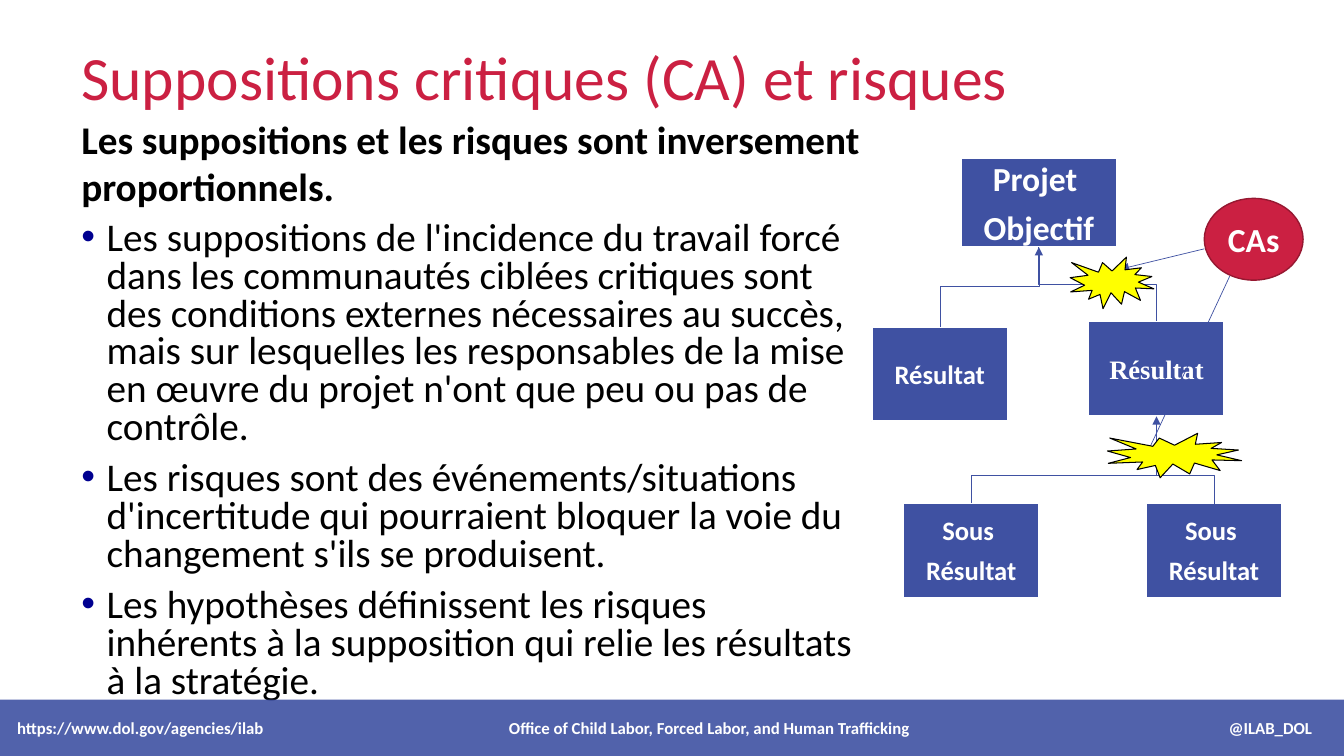
import pptx
import pptx.util
import pptx.dml.color
import pptx.enum.shapes
import pptx.enum.text
import pptx.oxml
import pptx.oxml.ns
from pptx.util import Cm

Preset = pptx.enum.shapes.MSO_SHAPE
Link = pptx.enum.shapes.MSO_CONNECTOR
Align = pptx.enum.text.PP_ALIGN
Anchor = pptx.enum.text.MSO_ANCHOR

# Content: positions and sizes are in centimetres
BLUE, RED, WHITE, BLACK = "3F51A2", "CB2042", "FFFFFF", "000000"
TITLE = "Suppositions critiques (CA) et risques"
INTRO = "Les suppositions et les risques sont inversement proportionnels."
POINTS = [
    "Les suppositions de l'incidence du travail forcé dans les communautés ciblées "
    "critiques sont des conditions externes nécessaires au succès, mais sur lesquelles "
    "les responsables de la mise en œuvre du projet n'ont que peu ou pas de contrôle.",
    "Les risques sont des événements/situations d'incertitude qui pourraient bloquer "
    "la voie du changement s'ils se produisent.",
    "Les hypothèses définissent les risques inhérents à la supposition qui relie les "
    "résultats à la stratégie.",
]
FOOTER = ["https://www.dol.gov/agencies/ilab",
          "Office of Child Labor, Forced Labor, and Human Trafficking",
          "@ILAB_DOL"]
FOOTER_TABS = [("ctr", 17.45), ("r", 32.64)]

RESULT_SIZE = (3.43, 2.39)
GOAL = (24.21, 3.99, 3.94, 2.24)
LEFT_RESULT = (21.97, 8.23, *RESULT_SIZE)
RIGHT_RESULT = (27.43, 8.1, *RESULT_SIZE)
LEFT_SUB = (22.76, 12.67, *RESULT_SIZE)
RIGHT_SUB = (28.88, 12.67, *RESULT_SIZE)
BOXES = [
    (GOAL, ["Projet ", "Objectif"], 24, "Calibri"),
    (LEFT_RESULT, ["Résultat"], 19, "Calibri"),
    (RIGHT_RESULT, ["Résultat"], 19, "Times New Roman"),
    (RIGHT_SUB, ["Sous ", "Résultat"], 19, "Calibri"),
    (LEFT_SUB, ["Sous ", "Résultat"], 19, "Calibri"),
]
SUB_BAR = 11.99
ASSUMPTIONS = (30.35, 5, 2.49, 2.06)
ASSUMPTION_ARROWS = [((30.35, 6.27), (28.24, 6.78)), ((30.99, 6.96), (28.88, 11.48))]
BURSTS = [(26.97, 6.48, 2.11, 1.3), (27.91, 10.92, 3.38, 1.12)]


# Helpers
def color(hex_code):
    return pptx.dml.color.RGBColor.from_string(hex_code)


def add_xml(parent, tag, **attributes):
    child = pptx.oxml.parse_xml(f"<a:{tag} {pptx.oxml.ns.nsdecls('a')}/>")
    for key, value in attributes.items():
        child.set(key, str(value))
    parent.append(child)
    return child


def write(shape, lines, size, ink, bold=False, font="Calibri", align=Align.LEFT,
          before=0, anchor=Anchor.TOP, wrap=True):
    frame = shape.text_frame
    frame.text = "\n".join(lines)
    frame.word_wrap = wrap
    frame.vertical_anchor = anchor
    for paragraph in frame.paragraphs:
        paragraph.alignment = align
        paragraph.space_before = pptx.util.Pt(before)
        for run in paragraph.runs:
            run.font.size = pptx.util.Pt(size)
            run.font.name = font
            run.font.bold = bold
            run.font.color.rgb = color(ink)
    return frame


def text_box(place, lines, size, ink, **style):
    return write(slide.shapes.add_textbox(*map(Cm, place)), lines, size, ink, **style)


def block(preset, place, fill, line=None, weight=0):
    shape = slide.shapes.add_shape(preset, *map(Cm, place))
    shape.shadow.inherit = False
    shape.fill.solid()
    shape.fill.fore_color.rgb = color(fill)
    if line:
        shape.line.color.rgb = color(line)
        shape.line.width = pptx.util.Pt(weight)
    else:
        shape.line.fill.background()
    return shape


def connect(start, end, arrow=False, kind=Link.STRAIGHT):
    link = slide.shapes.add_connector(kind, *map(Cm, (*start, *end)))
    link.line.color.rgb = color(BLUE)
    link.line.width = pptx.util.Pt(0.5)
    if arrow:
        add_xml(link.line._get_or_add_ln(), "tailEnd", type="triangle")
    add_xml(link._element.spPr, "effectLst")
    return link


def elbow(start, end, bend, arrow=False):
    """Leave start vertically, cross to the right at height bend, then reach end."""
    (x0, y0), (x1, y1) = start, end
    link = connect(start, end, arrow, Link.ELBOW)
    across, along = x1 - x0, abs(y1 - y0)
    link.left, link.top = Cm((x0 + x1 - along) / 2), Cm((y0 + y1 - across) / 2)
    link.width, link.height = Cm(along), Cm(across)
    # A quarter turn makes the connector leave vertically
    frame = link._element.spPr.find(pptx.oxml.ns.qn("a:xfrm"))
    frame.set("rot", "5400000")
    frame.set("flipV", "1")
    frame.set("flipH", "1" if y1 < y0 else "0")
    guides = link._element.spPr.find(".//" + pptx.oxml.ns.qn("a:avLst"))
    if guides is None:
        guides = add_xml(link._element.spPr.find(pptx.oxml.ns.qn("a:prstGeom")), "avLst")
    ratio = round((bend - y0) / (y1 - y0) * 100000)
    add_xml(guides, "gd", name="adj1", fmla=f"val {ratio}")


def top_of(box):
    return box[0] + box[2] / 2, box[1]


def bottom_of(box):
    return box[0] + box[2] / 2, box[1] + box[3]


# Slide
deck = pptx.Presentation()
deck.slide_width, deck.slide_height = Cm(33.87), Cm(19.05)
slide = deck.slides.add_slide(deck.slide_layouts[6])

# Title and text column
text_box((1.8, 1.12, 26.67, 1.57), [TITLE], 44, RED, before=6, anchor=Anchor.MIDDLE)
text_box((1.8, 2.79, 22.2, 2.64), [INTRO], 28, BLACK, bold=True)
points = text_box((1.8, 5.46, 20.17, 12.57), POINTS, 28, BLACK, before=10)
for point in points.paragraphs:
    point.line_spacing = 0.8
    properties = point._p.get_or_add_pPr()
    properties.set("marL", str(Cm(0.64)))
    properties.set("indent", str(Cm(-0.64)))
    add_xml(add_xml(properties, "buClr"), "srgbClr", val="000090")
    add_xml(properties, "buFont", typeface="Arial")
    add_xml(properties, "buChar", char="•")

# Results tree
for place, lines, size, font in BOXES:
    write(block(Preset.RECTANGLE, place, BLUE, WHITE, 1.5), lines, size, WHITE, bold=True,
          font=font, align=Align.CENTER, before=6, anchor=Anchor.MIDDLE, wrap=False)
goal_foot = bottom_of(GOAL)
left_head, right_head = top_of(LEFT_RESULT), top_of(RIGHT_RESULT)
elbow(left_head, goal_foot, (left_head[1] + goal_foot[1]) / 2, arrow=True)
elbow(goal_foot, right_head, (right_head[1] + goal_foot[1]) / 2)
sub_x, sub_y = top_of(RIGHT_SUB)
elbow(top_of(LEFT_SUB), (sub_x, sub_y + 0.02), SUB_BAR)
result_foot = bottom_of(RIGHT_RESULT)
connect((result_foot[0], SUB_BAR), result_foot, arrow=True)

# Critical assumptions
write(block(Preset.OVAL, ASSUMPTIONS, RED, "961831", 1), ["CAs"], 24, WHITE, bold=True,
      align=Align.CENTER, before=2, anchor=Anchor.MIDDLE, wrap=False)
for start, end in ASSUMPTION_ARROWS:
    connect(start, end, arrow=True)
for place in BURSTS:
    block(Preset.EXPLOSION1, place, "FFFF00", BLACK, 0.75)

# Footer band
band = block(Preset.RECTANGLE, (0, 17.63, 33.87, 1.42), BLUE)
add_xml(band._element.spPr.find(".//" + pptx.oxml.ns.qn("a:srgbClr")), "alpha", val=90000)
footer = write(band, ["\t".join(FOOTER)], 12, WHITE, bold=True, anchor=Anchor.MIDDLE)
footer.margin_left = Cm(0.43)
tabs = add_xml(footer.paragraphs[0]._p.get_or_add_pPr(), "tabLst")
for side, position in FOOTER_TABS:
    add_xml(tabs, "tab", pos=Cm(position), algn=side)

deck.save("out.pptx")
